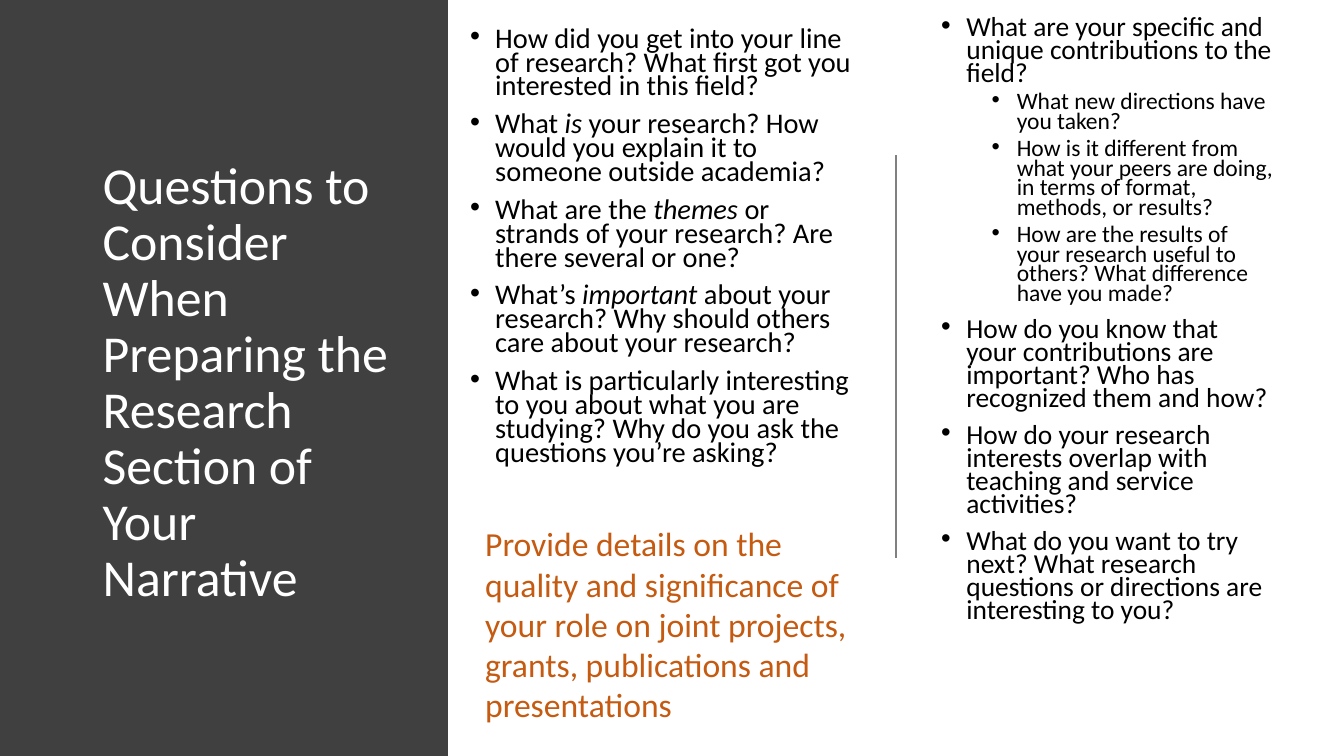
from dataclasses import dataclass

from lxml.etree import SubElement
from pptx import Presentation
from pptx.dml.color import RGBColor
from pptx.enum.shapes import MSO_CONNECTOR, MSO_SHAPE
from pptx.enum.text import MSO_ANCHOR
from pptx.oxml.ns import qn
from pptx.util import Inches, Pt

TITLE = "Questions to Consider When Preparing the Research Section of Your Narrative"
ADVICE = ("Provide details on the quality and significance of your role on joint "
          "projects, grants, publications and presentations")

# Each question is (level, text); asterisks enclose italic words.
RESEARCH_QUESTIONS = [
    (0, "How did you get into your line of research? What first got you interested in this field?"),
    (0, "What *is* your research? How would you explain it to someone outside academia?"),
    (0, "What are the *themes *or strands of your research? Are there several or one?"),
    (0, "What’s *important* about your research? Why should others care about your research?"),
    (0, "What is particularly interesting to you about what you are studying? "
        "Why do you ask the questions you’re asking?"),
]
CONTRIBUTION_QUESTIONS = [
    (0, "What are your specific and unique contributions to the field?"),
    (1, "What new directions have you taken?"),
    (1, "How is it different from what your peers are doing, in terms of format, methods, or results?"),
    (1, "How are the results of your research useful to others? What difference have you made?"),
    (0, "How do you know that your contributions are important? Who has recognized them and how?"),
    (0, "How do your research interests overlap with teaching and service activities?"),
    (0, "What do you want to try next? What research questions or directions are interesting to you?"),
]


@dataclass(frozen=True)
class Theme:
    font: str = "Calibri"
    panel: str = "404040"
    title: str = "FFFFFF"
    body: str = "000000"
    accent: str = "C55A11"
    rule: str = "808080"
    title_size: float = 37
    advice_size: float = 24
    research_sizes: tuple = (20.3,)
    contribution_sizes: tuple = (19.6, 16.8)
    title_spacing: float = 0.9
    body_spacing: float = 0.7
    space_before: tuple = (10, 5)
    indents: tuple = (0.25, 0.75)
    hanging: float = 0.25


THEME = Theme()
WIDTH, HEIGHT = 13.33, 7.5
PANEL_WIDTH = WIDTH / 3
RULE_X = WIDTH * 2 / 3

presentation = Presentation()
presentation.slide_width = Inches(WIDTH)
presentation.slide_height = Inches(HEIGHT)
slide = presentation.slides.add_slide(presentation.slide_layouts[6])


def add_text_frame(left, top, width, height):
    frame = slide.shapes.add_textbox(*map(Inches, (left, top, width, height))).text_frame
    frame.word_wrap = True
    frame.vertical_anchor = MSO_ANCHOR.TOP
    return frame


def set_font(paragraph, size, color):
    paragraph.font.name = THEME.font
    paragraph.font.size = Pt(size)
    paragraph.font.color.rgb = RGBColor.from_string(color)


def add_bullet(paragraph, indent):
    """Give the paragraph a round bullet with a hanging indent."""
    properties = paragraph._p.get_or_add_pPr()
    properties.set("marL", str(Inches(indent)))
    properties.set("indent", str(-Inches(THEME.hanging)))
    SubElement(properties, qn("a:buFont"), typeface="Arial")
    SubElement(properties, qn("a:buChar"), char="•")


def add_questions(questions, box, sizes):
    frame = add_text_frame(*box)
    for index, (level, text) in enumerate(questions):
        paragraph = frame.add_paragraph() if index else frame.paragraphs[0]
        paragraph.level = level
        paragraph.line_spacing = THEME.body_spacing
        paragraph.space_before = Pt(THEME.space_before[level])
        add_bullet(paragraph, THEME.indents[level])
        set_font(paragraph, sizes[level], THEME.body)
        for part, words in enumerate(text.split("*")):
            run = paragraph.add_run()
            run.text = words
            if part % 2:
                run.font.italic = True


def add_statement(text, box, size, color, spacing=1.0):
    paragraph = add_text_frame(*box).paragraphs[0]
    paragraph.text = text
    paragraph.line_spacing = spacing
    set_font(paragraph, size, color)


panel = slide.shapes.add_shape(MSO_SHAPE.RECTANGLE, 0, 0, Inches(PANEL_WIDTH), Inches(HEIGHT))
panel.shadow.inherit = False
panel.fill.solid()
panel.fill.fore_color.rgb = RGBColor.from_string(THEME.panel)
panel.line.fill.background()

add_statement(TITLE, (0.92, 1.54, 3.13, 4.77), THEME.title_size, THEME.title, THEME.title_spacing)
add_questions(RESEARCH_QUESTIONS, (PANEL_WIDTH + 0.12, 0.24, 3.98, 7.08), THEME.research_sizes)

rule = slide.shapes.add_connector(
    MSO_CONNECTOR.STRAIGHT, *map(Inches, (RULE_X, 1.54, RULE_X, 5.54)))
rule.line.color.rgb = RGBColor.from_string(THEME.rule)
rule.line.width = Pt(1)
SubElement(rule._element.spPr, qn("a:effectLst"))

add_questions(CONTRIBUTION_QUESTIONS, (RULE_X + 0.35, 0.13, 3.5, 7.37), THEME.contribution_sizes)
add_statement(ADVICE, (PANEL_WIDTH + 0.27, 5.14, 3.98, 2.12), THEME.advice_size, THEME.accent)

presentation.save("out.pptx")
